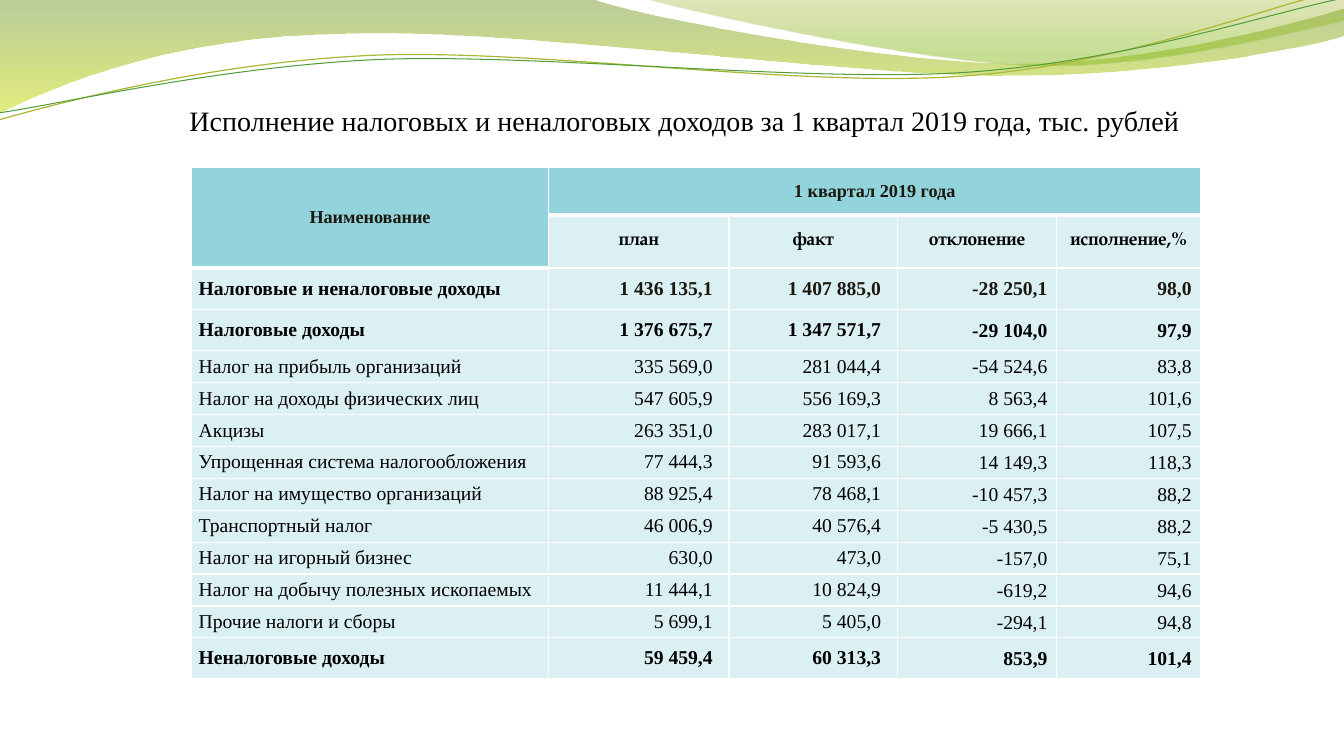
from dataclasses import dataclass
from math import cos, radians, sin

from lxml.etree import SubElement
from pptx import Presentation
from pptx.dml.color import RGBColor as RGB
from pptx.enum.text import MSO_ANCHOR as Anchor, MSO_AUTO_SIZE as AutoSize, PP_ALIGN as Align
from pptx.oxml.ns import qn
from pptx.util import Inches, Pt


@dataclass(frozen=True)
class Theme:
    font: str = "Times New Roman"
    subheader_font: str = "TeX Gyre Pagella"
    title_size: int = 20
    header_size: int = 13
    body_size: int = 14
    black: str = "000000"
    dark: str = "1B1810"
    header_fill: str = "92D3DC"
    body_fill: str = "DBF0F3"
    grid: str = "FFFFFF"
    # Gradient stops: position, colour, opacity in percent
    left_wave: tuple = ((0, "69921C", 45), (1, "CCE10F", 55))
    right_wave: tuple = ((0, "9BAA1A", 30), (0.8, "81BA16", 45))
    olive_line: tuple = ("A9B733", 0.85)
    green_line: tuple = ("549E39", 0.75)


THEME = Theme()

# Outlines in inches: a pair is a corner, six numbers are a Bezier curve
LEFT_WAVE = [
    (0, 0), (5.87, -0.01), (6.34, 0.17, 8.84, 0.63, 10.11, 0.63),
    (11.37, 0.63, 12.77, 0.26, 13.33, 0.09), (13.34, 0.36),
    (13.11, 0.44, 11.59, 0.76, 9.94, 0.75), (8.29, 0.75, 5.09, 0.28, 3.43, 0.34),
    (1.72, 0.36, 0.61, 0.83, -0.02, 1.13), (0, 0)]
RIGHT_WAVE = [
    (6.38, -0.01), (6.79, 0.11, 9.09, 0.62, 10.25, 0.65),
    (11.4, 0.69, 12.82, 0.32, 13.33, 0.21), (13.33, 0), (6.38, -0.01)]
OLIVE_LINE = [
    (-0.01, 1.19), (0.63, 1.01, 2.1, 0.62, 3.69, 0.55),
    (5.27, 0.48, 7.89, 0.87, 9.49, 0.76), (11.1, 0.66, 12.51, 0.08, 13.3, -0.1)]
GREEN_LINE = [
    (-0.01, 1.12), (0.62, 1.03, 2.18, 0.66, 3.77, 0.59),
    (5.37, 0.53, 7.96, 0.82, 9.55, 0.72), (11.14, 0.62, 12.55, 0.14, 13.33, -0.02)]
LINE_TILT = -2.7
LINE_CENTER = (6.66, 0.57)

TITLE = "Исполнение налоговых и неналоговых доходов за 1 квартал 2019 года, тыс. рублей"
REVENUES = [
    ("Наименование", "1 квартал 2019 года", "", "", ""),
    ("", "план", "факт", "отклонение", "исполнение,%"),
    ("Налоговые и неналоговые доходы", "1 436 135,1", "1 407 885,0", "-28 250,1", "98,0"),
    ("Налоговые доходы", "1 376 675,7", "1 347 571,7", "-29 104,0", "97,9"),
    ("Налог на прибыль организаций", "335 569,0", "281 044,4", "-54 524,6", "83,8"),
    ("Налог на доходы физических лиц", "547 605,9", "556 169,3", "8 563,4", "101,6"),
    ("Акцизы", "263 351,0", "283 017,1", "19 666,1", "107,5"),
    ("Упрощенная система налогообложения", "77 444,3", "91 593,6", "14 149,3", "118,3"),
    ("Налог на имущество организаций", "88 925,4", "78 468,1", "-10 457,3", "88,2"),
    ("Транспортный налог", "46 006,9", "40 576,4", "-5 430,5", "88,2"),
    ("Налог на игорный бизнес", "630,0", "473,0", "-157,0", "75,1"),
    ("Налог на добычу полезных ископаемых", "11 444,1", "10 824,9", "-619,2", "94,6"),
    ("Прочие налоги и сборы", "5 699,1", "5 405,0", "-294,1", "94,8"),
    ("Неналоговые доходы", "59 459,4", "60 313,3", "853,9", "101,4"),
]
COLUMN_WIDTHS = (3.54, 1.79, 1.67, 1.58, 1.43)
SPECIAL_HEIGHTS = {0: 0.47, 1: 0.53, 2: 0.41, 3: 0.41, 13: 0.4}
TOTAL_ROWS = (2, 3, 13)


def place(part, box, tilt):
    """Move an outline part into the box, undoing the tilt set on the shape."""
    turn, (center_x, center_y) = radians(-tilt), LINE_CENTER
    points = []
    for x, y in zip(part[::2], part[1::2]):
        dx, dy = x - center_x, y - center_y
        points.append((Inches(box[0] + center_x + dx * cos(turn) - dy * sin(turn)),
                       Inches(box[1] + center_y + dx * sin(turn) + dy * cos(turn))))
    return points


def add_curve(slide, box, outline, close, tilt=0):
    parts = [place(part, box, tilt) for part in outline]
    ends = [part[-1] for part in parts]
    builder = slide.shapes.build_freeform(*ends[0])
    builder.add_line_segments(ends[1:], close=close)
    curve = builder.convert_to_shape()
    curve.shadow.inherit = False

    # Bend the segments that have control points
    left, top = curve.left, curve.top
    segments = list(curve._element.spPr.iter(qn("a:lnTo")))
    for segment, points in zip(segments, parts[1:]):
        if len(points) == 3:
            bend = segment.makeelement(qn("a:cubicBezTo"))
            for x, y in points:
                SubElement(bend, qn("a:pt"), x=str(x - left), y=str(y - top))
            segment.getparent().replace(segment, bend)
    curve.rotation = tilt
    return curve


def add_waves(slide, box):
    # Translucent bands
    for outline, stops in ((LEFT_WAVE, THEME.left_wave), (RIGHT_WAVE, THEME.right_wave)):
        band = add_curve(slide, box, outline, close=True)
        band.line.fill.background()
        band.fill.gradient()
        band.fill.gradient_angle = 270
        for stop, (position, color, _) in zip(band.fill.gradient_stops, stops):
            stop.position = position
            stop.color.rgb = RGB.from_string(color)
        colors = band._element.spPr.iter(qn("a:srgbClr"))
        for color, (_, _, opacity) in zip(colors, stops):
            SubElement(color, qn("a:alpha"), val=str(opacity * 1000))

    # Thin lines
    for outline, (color, width) in ((OLIVE_LINE, THEME.olive_line),
                                    (GREEN_LINE, THEME.green_line)):
        thread = add_curve(slide, box, outline, close=False, tilt=LINE_TILT)
        thread.fill.background()
        thread.line.color.rgb = RGB.from_string(color)
        thread.line.width = Pt(width)


def set_font(paragraph, size, color, bold=False, name=THEME.font):
    font = paragraph.font
    font.name, font.size, font.bold = name, Pt(size), bold
    font.color.rgb = RGB.from_string(color)


def add_title(slide, box):
    title = slide.shapes.title
    title.left, title.top, title.width, title.height = map(Inches, box)
    frame = title.text_frame
    frame.text = TITLE
    frame.word_wrap = True
    frame.auto_size = AutoSize.NONE
    frame.vertical_anchor = Anchor.TOP
    frame.paragraphs[0].alignment = Align.CENTER
    set_font(frame.paragraphs[0], THEME.title_size, THEME.black)


def set_borders(cell, top, bottom):
    properties = cell._tc.get_or_add_tcPr()
    sides = (("a:lnL", 1), ("a:lnR", 1), ("a:lnT", top), ("a:lnB", bottom))
    for index, (side, width) in enumerate(sides):
        line = SubElement(properties, qn(side), w=str(Pt(width)))
        SubElement(SubElement(line, qn("a:solidFill")), qn("a:srgbClr"), val=THEME.grid)
        properties.insert(index, line)


def format_cell(cell, row, column):
    paragraph = cell.text_frame.paragraphs[0]
    cell.vertical_anchor = Anchor.MIDDLE
    is_header = row == 0 or (row == 1 and column == 0)
    cell.fill.solid()
    cell.fill.fore_color.rgb = RGB.from_string(
        THEME.header_fill if is_header else THEME.body_fill)

    # Text
    if row < 2:
        paragraph.alignment = Align.CENTER
        set_font(paragraph, THEME.header_size, THEME.dark if is_header else THEME.black,
                 True, THEME.font if is_header else THEME.subheader_font)
    else:
        paragraph.alignment = Align.RIGHT if column else Align.LEFT
        color = THEME.dark if row == 2 and column else THEME.black
        set_font(paragraph, THEME.body_size, color, row in TOTAL_ROWS)

    # Margins
    if row < 2 or column == 0:
        margins = (0.07, 0, 0.07)
    else:
        margins = (0, 0, 0.16) if column < 3 else (0.01, 0.01, 0.09)
    cell.margin_left, cell.margin_top, cell.margin_right = map(Inches, margins)
    cell.margin_bottom = 0

    # A thick rule closes the header
    last_header_row = 0 if column else 1
    set_borders(cell, 3 if row == last_header_row + 1 else 1,
                3 if row == last_header_row else 1)


def add_revenue_table(slide, box):
    frame = slide.shapes.add_table(len(REVENUES), len(COLUMN_WIDTHS), *map(Inches, box))
    table = frame.table
    table.first_row = table.horz_banding = False
    for column, width in zip(table.columns, COLUMN_WIDTHS):
        column.width = Inches(width)
    plain_height = ((box[3] - sum(SPECIAL_HEIGHTS.values()))
                    / (len(REVENUES) - len(SPECIAL_HEIGHTS)))
    for r, values in enumerate(REVENUES):
        table.rows[r].height = Inches(SPECIAL_HEIGHTS.get(r, plain_height))
        for c, value in enumerate(values):
            cell = table.cell(r, c)
            cell.text = value
            format_cell(cell, r, c)
    table.cell(0, 0).merge(table.cell(1, 0))
    table.cell(0, 1).merge(table.cell(0, 4))


def main():
    deck = Presentation()
    deck.slide_width, deck.slide_height = Inches(13.33), Inches(7.5)
    slide = deck.slides.add_slide(deck.slide_layouts[5])
    add_waves(slide, (0, 0, 13.33, 1.2))
    add_revenue_table(slide, (1.9, 1.66, 10.01, 5.07))
    add_title(slide, (1.67, 0.98, 10.24, 0.44))
    deck.save("out.pptx")


if __name__ == "__main__":
    main()
